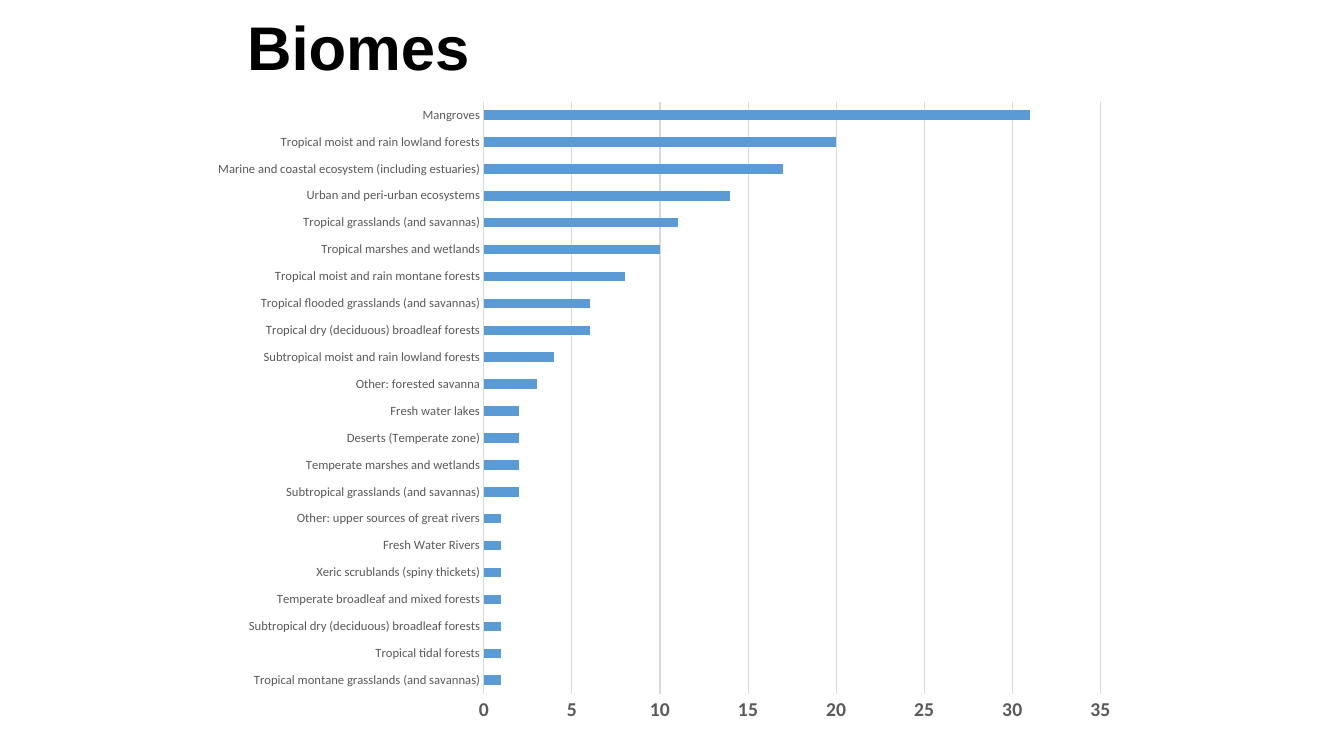
from pptx import Presentation
from pptx.chart.data import CategoryChartData
from pptx.dml.color import RGBColor
from pptx.enum.chart import XL_CHART_TYPE, XL_TICK_MARK
from pptx.enum.text import MSO_ANCHOR, PP_ALIGN
from pptx.util import Inches, Pt

BAR = XL_CHART_TYPE.BAR_CLUSTERED
NO_TICK = XL_TICK_MARK.NONE
MIDDLE = MSO_ANCHOR.MIDDLE
LEFT = PP_ALIGN.LEFT

COLORS = {"title": "000000", "label": "595959", "grid": "D9D9D9", "bar": "5B9BD5"}

# Biomes from the bottom bar to the top one
BIOMES = [
    ("Tropical montane grasslands (and savannas)", 1),
    ("Tropical tidal forests", 1),
    ("Subtropical dry (deciduous) broadleaf forests", 1),
    ("Temperate broadleaf and mixed forests", 1),
    ("Xeric scrublands (spiny thickets)", 1),
    ("Fresh Water Rivers", 1),
    ("Other: upper sources of great rivers", 1),
    ("Subtropical grasslands (and savannas)", 2),
    ("Temperate marshes and wetlands", 2),
    ("Deserts (Temperate zone)", 2),
    ("Fresh water lakes", 2),
    ("Other: forested savanna", 3),
    ("Subtropical moist and rain lowland forests", 4),
    ("Tropical dry (deciduous) broadleaf forests", 6),
    ("Tropical flooded grasslands (and savannas)", 6),
    ("Tropical moist and rain montane forests", 8),
    ("Tropical marshes and wetlands", 10),
    ("Tropical grasslands (and savannas)", 11),
    ("Urban and peri-urban ecosystems", 14),
    ("Marine and coastal ecosystem (including estuaries)", 17),
    ("Tropical moist and rain lowland forests", 20),
    ("Mangroves", 31),
]


def rgb(name):
    return RGBColor.from_string(COLORS[name])


def set_font(font, size, color, name="Calibri", bold=False):
    font.name = name
    font.size = Pt(size)
    font.bold = bold
    font.color.rgb = rgb(color)


def set_line(line, color, width=0.75):
    line.color.rgb = rgb(color)
    line.width = Pt(width)


def write_text(tf, text, align=LEFT, spacing=0.9, **font):
    p = tf.paragraphs[0]
    p.alignment = align
    p.line_spacing = spacing
    r = p.add_run()
    r.text = text
    set_font(r.font, **font)


def add_title(slide, text):
    sp = slide.shapes.title
    sp.left, sp.top = Inches(2.35), Inches(0)
    sp.width, sp.height = Inches(8.62), Inches(1)
    tf = sp.text_frame
    tf.word_wrap = True
    tf.vertical_anchor = MIDDLE
    write_text(tf, text, size=44, color="title", name="Arial", bold=True)


def format_axis(axis, **font):
    axis.major_tick_mark = NO_TICK
    axis.minor_tick_mark = NO_TICK
    set_font(axis.tick_labels.font, **font)


def add_bar_chart(slide, rows):
    data = CategoryChartData()
    data.categories = [name for name, _ in rows]
    data.add_series("Series 1", [count for _, count in rows])
    frame = slide.shapes.add_chart(
        BAR, Inches(1.98), Inches(0.88), Inches(9.22), Inches(6.41), data)
    chart = frame.chart
    chart.has_legend = False
    chart.has_title = False
    set_font(chart.font, size=10, color="title")

    # Bars
    plot = chart.plots[0]
    plot.gap_width = 182
    plot.vary_by_categories = False
    fill = plot.series[0].format.fill
    fill.solid()
    fill.fore_color.rgb = rgb("bar")

    # Biome names
    names = chart.category_axis
    format_axis(names, size=9, color="label")
    names.has_major_gridlines = False
    set_line(names.format.line, "grid")

    # Count scale
    counts = chart.value_axis
    format_axis(counts, size=14, color="label", bold=True)
    counts.minimum_scale, counts.maximum_scale = 0, 35
    counts.major_unit = 5
    counts.format.line.fill.background()
    counts.has_major_gridlines = True
    set_line(counts.major_gridlines.format.line, "grid")


def main():
    prs = Presentation()
    prs.slide_width, prs.slide_height = Inches(13.33), Inches(7.5)
    title_only = prs.slide_layouts[5]
    slide = prs.slides.add_slide(title_only)
    add_title(slide, "Biomes")
    add_bar_chart(slide, BIOMES)
    prs.save("out.pptx")


if __name__ == "__main__":
    main()
